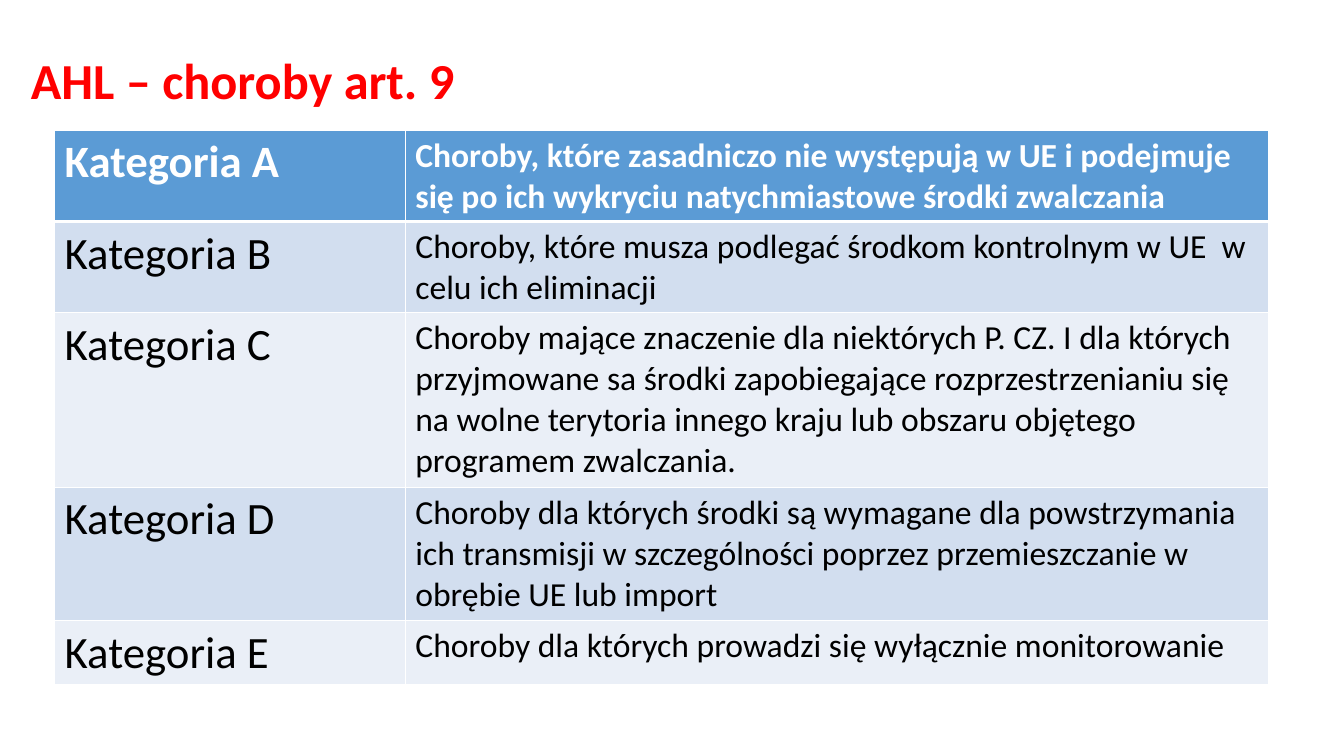
from pptx import Presentation
from pptx.dml.color import RGBColor
from pptx.enum.text import MSO_ANCHOR
from pptx.oxml import parse_xml
from pptx.oxml.ns import nsdecls
from pptx.util import Pt

EMU_PER_PX = 9525
FONT = "Calibri"
COLORS = {
    "title": "FF0000",
    "header": "5B9BD5",
    "odd_row": "D2DEEF",
    "even_row": "EAEFF7",
    "white": "FFFFFF",
    "text": "000000",
}
COLUMN_WIDTHS = (334, 822)
CATEGORIES = [
    ("Kategoria A", 87, "Choroby, które zasadniczo nie występują w UE i podejmuje "
     "się po ich wykryciu natychmiastowe środki zwalczania"),
    ("Kategoria B", 87, "Choroby, które musza podlegać środkom kontrolnym w UE  w "
     "celu ich eliminacji"),
    ("Kategoria C", 166, "Choroby mające znaczenie dla niektórych P. CZ. I dla których "
     "przyjmowane sa środki zapobiegające rozprzestrzenianiu się na wolne terytoria "
     "innego kraju lub obszaru objętego programem zwalczania."),
    ("Kategoria D", 127, "Choroby dla których środki są wymagane dla powstrzymania "
     "ich transmisji w szczególności poprzez przemieszczanie w obrębie UE lub import"),
    ("Kategoria E", 61, "Choroby dla których prowadzi się wyłącznie monitorowanie"),
]


def px(length):
    return length * EMU_PER_PX


def add_run(paragraph, text, size, color, bold):
    run = paragraph.add_run()
    run.text = text
    run.font.name = FONT
    run.font.size = Pt(size)
    run.font.bold = bold
    run.font.color.rgb = RGBColor.from_string(COLORS[color])


def set_borders(cell, bottom, top):
    """Draw white cell borders; bottom and top are widths in points."""
    properties = cell._tc.get_or_add_tcPr()
    widths = (("lnL", 1), ("lnR", 1), ("lnT", top), ("lnB", bottom))
    for position, (side, width) in enumerate(widths):
        properties.insert(position, parse_xml(
            f'<a:{side} {nsdecls("a")} w="{Pt(width)}"><a:solidFill>'
            f'<a:srgbClr val="{COLORS["white"]}"/></a:solidFill></a:{side}>'))


def add_title(slide, left, top, width, height):
    frame = slide.shapes.add_textbox(px(left), px(top), px(width), px(height)).text_frame
    frame.word_wrap = True
    frame.vertical_anchor = MSO_ANCHOR.BOTTOM
    frame.margin_bottom = 0
    paragraph = frame.paragraphs[0]
    paragraph.line_spacing = 0.9
    add_run(paragraph, "AHL – choroby art. 9", 36, "title", True)


def add_category_table(slide, left, top):
    width = sum(COLUMN_WIDTHS)
    height = sum(row_height for _, row_height, _ in CATEGORIES)
    table = slide.shapes.add_table(len(CATEGORIES), len(COLUMN_WIDTHS), px(left), px(top),
                                   px(width), px(height)).table
    for column, column_width in zip(table.columns, COLUMN_WIDTHS):
        column.width = px(column_width)
    for index, (category, row_height, description) in enumerate(CATEGORIES):
        row = table.rows[index]
        row.height = px(row_height)
        is_header = index == 0
        fill = "header" if is_header else "odd_row" if index % 2 else "even_row"
        for cell, text, size in zip(row.cells, (category, description), (32, 24)):
            cell.fill.solid()
            cell.fill.fore_color.rgb = RGBColor.from_string(COLORS[fill])
            set_borders(cell, bottom=3 if is_header else 1, top=3 if index == 1 else 1)
            add_run(cell.text_frame.paragraphs[0], text, size,
                    "white" if is_header else "text", is_header)


def main():
    presentation = Presentation()
    presentation.slide_width = px(1280)
    presentation.slide_height = px(720)
    slide = presentation.slides.add_slide(presentation.slide_layouts[6])
    add_title(slide, 20, 0, 1151, 105)
    add_category_table(slide, 52, 124)
    presentation.save("out.pptx")


if __name__ == "__main__":
    main()
